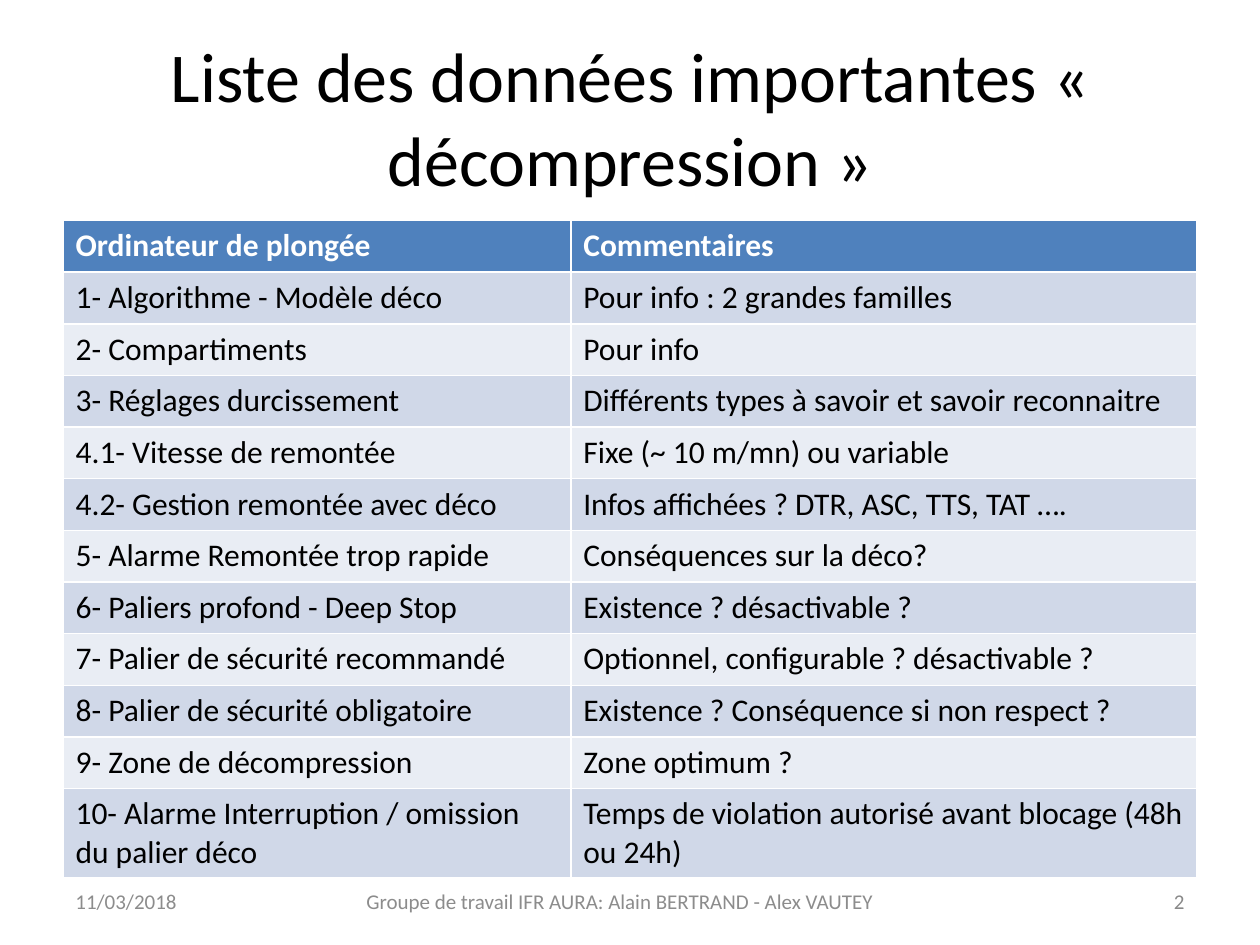
"""Build the slide listing the key decompression data of a dive computer."""
import pptx
import pptx.dml.color
import pptx.enum.text
import pptx.util

Inches = pptx.util.Inches
Pt = pptx.util.Pt
RGBColor = pptx.dml.color.RGBColor
PP_ALIGN = pptx.enum.text.PP_ALIGN
MIDDLE = pptx.enum.text.MSO_ANCHOR.MIDDLE

FONT = "Calibri"
BLACK = RGBColor(0x00, 0x00, 0x00)
WHITE = RGBColor(0xFF, 0xFF, 0xFF)
HEADER_BLUE = RGBColor(0x4F, 0x81, 0xBD)
BAND_DARK = RGBColor(0xD0, 0xD8, 0xE8)
BAND_LIGHT = RGBColor(0xE9, 0xED, 0xF4)
FOOTER_GREY = RGBColor(0x8C, 0x8C, 0x8C)
NUMBER_GREY = RGBColor(0x89, 0x89, 0x89)

TITLE = "Liste des données importantes « décompression »"
COLUMN_WIDTHS = (4.03, 4.97)
ROW_HEIGHT = 0.41
LAST_ROW_HEIGHT = 0.7
CRITERIA = [
    ("Ordinateur de plongée", "Commentaires"),
    ("1- Algorithme - Modèle déco", "Pour info : 2 grandes familles"),
    ("2- Compartiments", "Pour info"),
    ("3- Réglages durcissement", "Différents types à savoir et savoir reconnaitre"),
    ("4.1- Vitesse de remontée", "Fixe (~ 10 m/mn) ou variable"),
    ("4.2- Gestion remontée avec déco", "Infos affichées ? DTR, ASC, TTS, TAT …."),
    ("5- Alarme Remontée trop rapide", "Conséquences sur la déco?"),
    ("6- Paliers profond - Deep Stop", "Existence ? désactivable ?"),
    ("7- Palier de sécurité recommandé", "Optionnel, configurable ? désactivable ?"),
    ("8- Palier de sécurité obligatoire", "Existence ? Conséquence si non respect ?"),
    ("9- Zone de décompression", "Zone optimum ?"),
    ("10- Alarme Interruption / omission du palier déco",
     "Temps de violation autorisé avant blocage (48h ou 24h)"),
]
FOOTERS = [
    ("11/03/2018", 0.5, 1.59, PP_ALIGN.LEFT, FOOTER_GREY),
    ("Groupe de travail IFR AURA: Alain BERTRAND - Alex VAUTEY",
     2.56, 4.72, PP_ALIGN.CENTER, FOOTER_GREY),
    ("2", 7.52, 1.98, PP_ALIGN.RIGHT, NUMBER_GREY),
]


def write(frame, text, size, color, bold=False, align=PP_ALIGN.LEFT):
    """Fill a text frame with one formatted paragraph."""
    frame.text = text
    paragraph = frame.paragraphs[0]
    paragraph.alignment = align
    font = paragraph.runs[0].font
    font.name = FONT
    font.size = Pt(size)
    font.bold = bold
    font.color.rgb = color


def add_title(slide):
    """Place and fill the title placeholder."""
    title = slide.shapes.title
    title.left, title.top = Inches(0.5), Inches(0.3)
    title.width, title.height = Inches(9), Inches(1.25)
    title.text_frame.vertical_anchor = MIDDLE
    write(title.text_frame, TITLE, 40, BLACK, align=PP_ALIGN.CENTER)


def add_criteria_table(slide):
    """Add the banded table of criteria and comments."""
    height = ROW_HEIGHT * (len(CRITERIA) - 1) + LAST_ROW_HEIGHT
    table = slide.shapes.add_table(
        len(CRITERIA), len(COLUMN_WIDTHS), Inches(0.5), Inches(1.75),
        Inches(sum(COLUMN_WIDTHS)), Inches(height)).table
    for column, width in zip(table.columns, COLUMN_WIDTHS):
        column.width = Inches(width)
    for index, entries in enumerate(CRITERIA):
        is_header = index == 0
        is_last = index == len(CRITERIA) - 1
        table.rows[index].height = Inches(LAST_ROW_HEIGHT if is_last else ROW_HEIGHT)
        band = BAND_DARK if index % 2 else BAND_LIGHT
        for cell, entry in zip(table.rows[index].cells, entries):
            cell.fill.solid()
            cell.fill.fore_color.rgb = HEADER_BLUE if is_header else band
            write(cell.text_frame, entry, 18, WHITE if is_header else BLACK, is_header)


def add_footer(slide, text, left, width, align, color):
    """Add one footer text at the bottom of the slide."""
    footer = slide.shapes.add_textbox(
        Inches(left), Inches(6.95), Inches(width), Inches(0.4))
    footer.text_frame.word_wrap = True
    footer.text_frame.vertical_anchor = MIDDLE
    write(footer.text_frame, text, 12, color, align=align)


def main():
    """Build and save the presentation."""
    presentation = pptx.Presentation()
    presentation.slide_width = Inches(10)
    presentation.slide_height = Inches(7.5)
    slide = presentation.slides.add_slide(presentation.slide_layouts[5])
    add_title(slide)
    add_criteria_table(slide)
    for footer in FOOTERS:
        add_footer(slide, *footer)
    presentation.save("out.pptx")


if __name__ == "__main__":
    main()
